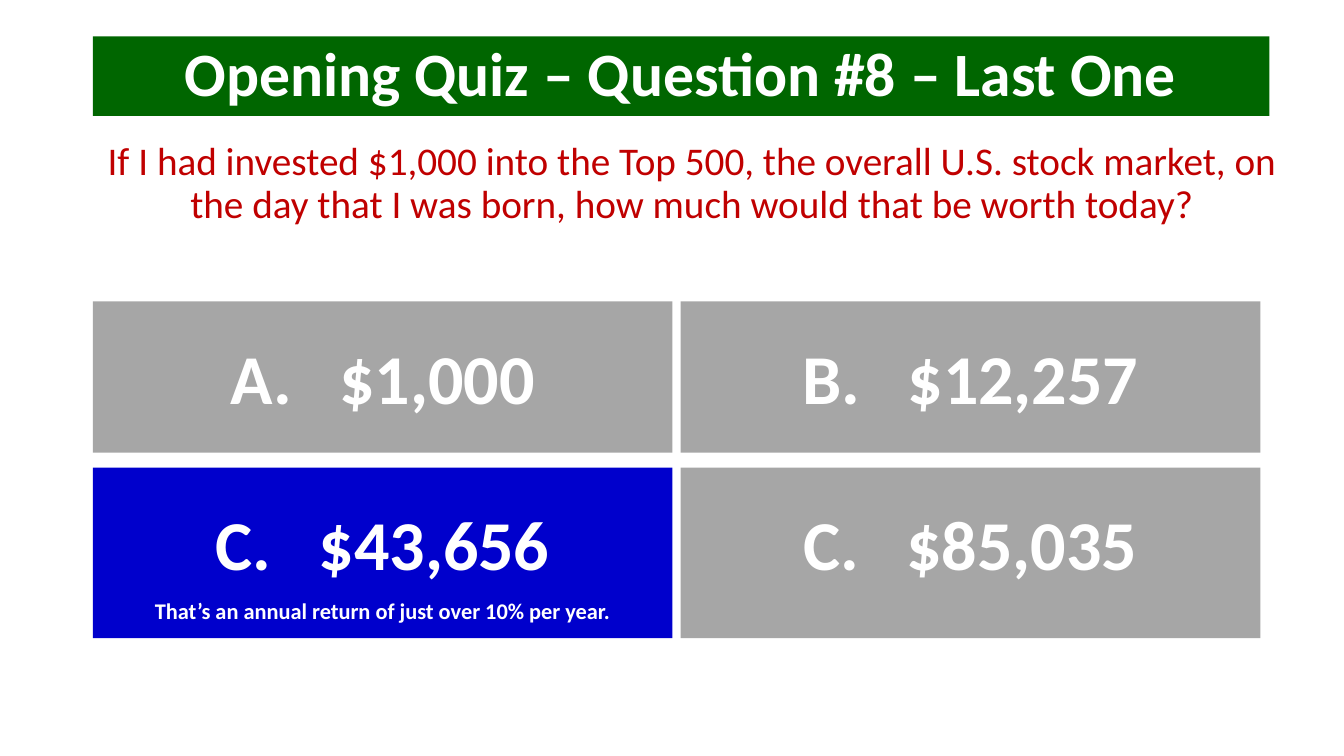
from pptx import Presentation
from pptx.dml.color import RGBColor
from pptx.enum.shapes import MSO_SHAPE
from pptx.enum.text import MSO_ANCHOR, MSO_AUTO_SIZE, PP_ALIGN
from pptx.util import Inches, Pt

RECTANGLE = MSO_SHAPE.RECTANGLE
TOP, MIDDLE = MSO_ANCHOR.TOP, MSO_ANCHOR.MIDDLE
CENTER = PP_ALIGN.CENTER
NO_AUTOFIT = MSO_AUTO_SIZE.NONE

TITLE_ONLY = 5
COLORS = {
    "banner": "006600",
    "question": "C00000",
    "wrong": "A6A6A6",
    "right": "0000CC",
    "light": "FFFFFF",
}

LEFT = 0.92
COLUMN_WIDTH, COLUMN_PITCH = 5.75, 5.83
ROWS = [(2.99, 1.5), (4.64, 1.69)]  # top, height
ANSWER_INSET = 0.42
LETTER_GAP = 2260  # hundredths of a point added after the letter

ANSWERS = [
    [("A.", "$1,000", None), ("B.", "$12,257", None)],
    [("C.", "$43,656", "That’s an annual return of just over 10% per year."),
     ("C.", "$85,035", None)],
]


def apply_format(target, values):
    for attribute, value in values.items():
        setattr(target, attribute, value)


def place(shape, left, top, width, height):
    apply_format(shape, {"left": Inches(left), "top": Inches(top),
                         "width": Inches(width), "height": Inches(height)})


def paint(shape, color):
    shape.fill.solid()
    shape.fill.fore_color.rgb = RGBColor.from_string(COLORS[color])


def set_frame(frame, anchor, top_inset=0.05):
    apply_format(frame, {"word_wrap": True, "auto_size": NO_AUTOFIT,
                         "vertical_anchor": anchor,
                         "margin_top": Inches(top_inset)})


def write(paragraph, parts, size, color, bold=False, space_before=0):
    """Fill a centred paragraph and return its runs, one for each part."""
    apply_format(paragraph, {"alignment": CENTER, "line_spacing": 0.9,
                             "space_before": Pt(space_before)})
    runs = []
    for text in parts:
        run = paragraph.add_run()
        run.text = text
        apply_format(run.font, {"name": "Calibri", "size": Pt(size), "bold": bold})
        run.font.color.rgb = RGBColor.from_string(COLORS[color])
        runs.append(run)
    return runs


def add_banner(slide, text):
    banner = slide.shapes.title
    place(banner, LEFT, 0.36, 11.67, 0.79)
    paint(banner, "banner")
    set_frame(banner.text_frame, MIDDLE)
    write(banner.text_frame.paragraphs[0], [text], 44, "light", bold=True)


def add_question(slide, text):
    question = slide.shapes.add_textbox(0, 0, 0, 0)
    place(question, LEFT, 1.36, 11.88, 5.4)
    set_frame(question.text_frame, TOP)
    write(question.text_frame.paragraphs[0], [text], 28, "question")


def add_answer(slide, column, row, letter, amount, remark):
    """Add one answer tile; the tile with a remark is the right answer."""
    top, height = ROWS[row]
    tile = slide.shapes.add_shape(RECTANGLE, 0, 0, 0, 0)
    place(tile, LEFT + column * COLUMN_PITCH, top, COLUMN_WIDTH, height)
    tile.shadow.inherit = False
    tile.line.fill.background()
    paint(tile, "right" if remark else "wrong")
    frame = tile.text_frame
    set_frame(frame, TOP, ANSWER_INSET)
    _, gap, _ = write(frame.paragraphs[0], [letter, " ", amount], 50, "light", bold=True)
    gap.font._element.set("spc", str(LETTER_GAP))
    if remark:
        write(frame.add_paragraph(), [remark], 16, "light", bold=True, space_before=10)


def main():
    deck = Presentation()
    deck.slide_width, deck.slide_height = Inches(13.33), Inches(7.5)
    slide = deck.slides.add_slide(deck.slide_layouts[TITLE_ONLY])
    add_banner(slide, "Opening Quiz – Question #8 – Last One")
    add_question(slide, "If I had invested $1,000 into the Top 500, the overall U.S. "
                        "stock market, on the day that I was born, how much would "
                        "that be worth today?")
    for row, answers in enumerate(ANSWERS):
        for column, answer in enumerate(answers):
            add_answer(slide, column, row, *answer)
    deck.save("out.pptx")


if __name__ == "__main__":
    main()
